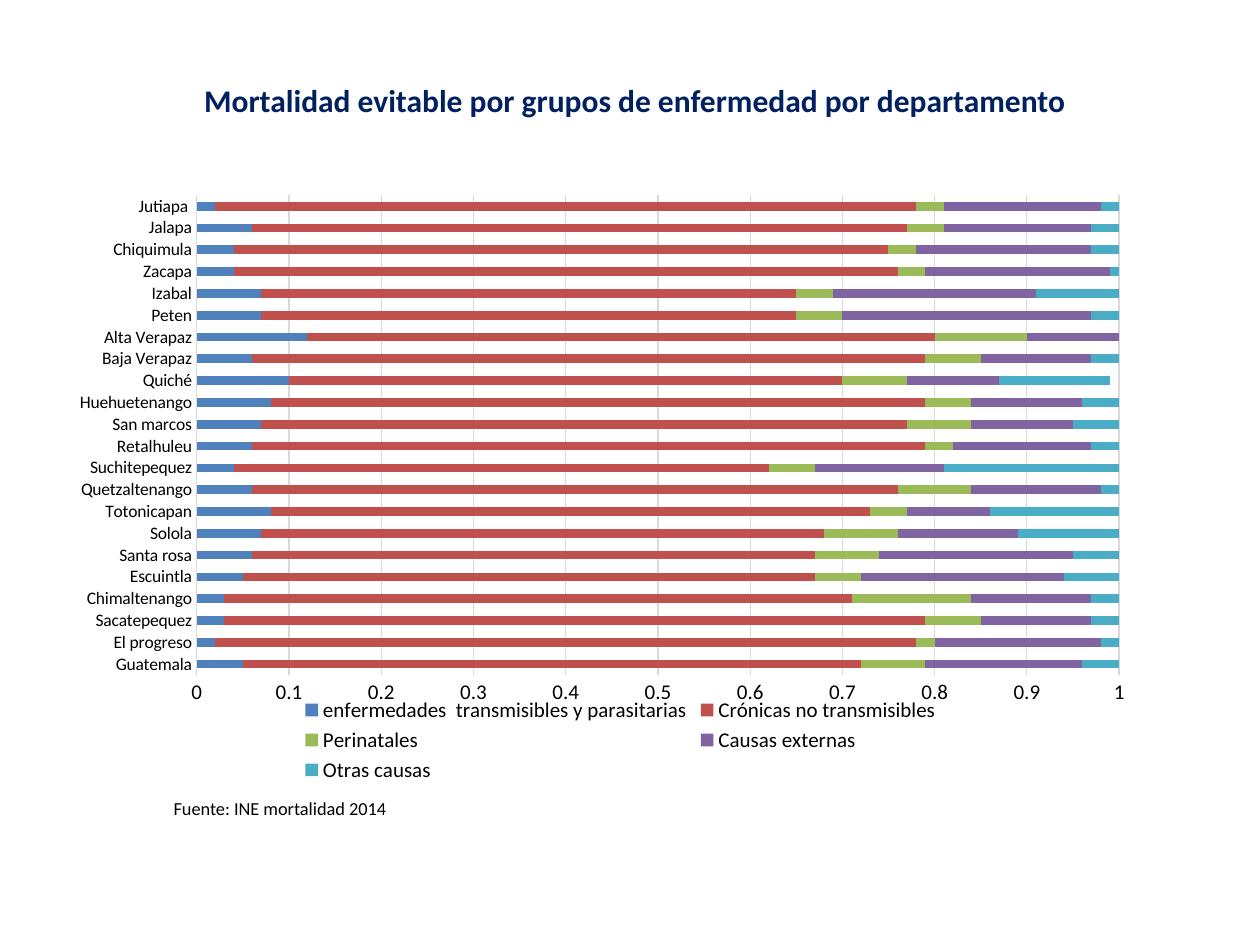
from dataclasses import dataclass

from lxml.etree import SubElement
from pptx import Presentation
from pptx.chart.data import CategoryChartData
from pptx.dml.color import RGBColor
from pptx.enum.chart import XL_CHART_TYPE, XL_LEGEND_POSITION, XL_TICK_MARK
from pptx.enum.text import MSO_ANCHOR, MSO_AUTO_SIZE, PP_ALIGN
from pptx.oxml.ns import qn
from pptx.util import Inches, Pt


@dataclass(frozen=True)
class Theme:
    font: str = "Calibri"
    text: str = "000000"
    title: str = "002060"
    grid: str = "D9D9D9"
    title_size: float = 18
    chart_size: float = 12
    category_size: float = 10
    source_size: float = 10.5


THEME = Theme()

DEPARTMENTS = [
    "Guatemala", "El progreso", "Sacatepequez", "Chimaltenango", "Escuintla", "Santa rosa",
    "Solola", "Totonicapan", "Quetzaltenango", "Suchitepequez", "Retalhuleu", "San marcos",
    "Huehuetenango", "Quiché", "Baja Verapaz", "Alta Verapaz", "Peten", "Izabal",
    "Zacapa", "Chiquimula", "Jalapa", "Jutiapa ",
]

CAUSES = [
    ("enfermedades  transmisibles y parasitarias", "4F81BD",
     [0.05, 0.02, 0.03, 0.03, 0.05, 0.06, 0.07, 0.08, 0.06, 0.04, 0.06,
      0.07, 0.08, 0.1, 0.06, 0.12, 0.07, 0.07, 0.04, 0.04, 0.06, 0.02]),
    ("Crónicas no transmisibles", "C0504D",
     [0.67, 0.76, 0.76, 0.68, 0.62, 0.61, 0.61, 0.65, 0.7, 0.58, 0.73,
      0.7, 0.71, 0.6, 0.73, 0.68, 0.58, 0.58, 0.72, 0.71, 0.71, 0.76]),
    ("Perinatales", "9BBB59",
     [0.07, 0.02, 0.06, 0.13, 0.05, 0.07, 0.08, 0.04, 0.08, 0.05, 0.03,
      0.07, 0.05, 0.07, 0.06, 0.1, 0.05, 0.04, 0.03, 0.03, 0.04, 0.03]),
    ("Causas externas", "8064A2",
     [0.17, 0.18, 0.12, 0.13, 0.22, 0.21, 0.13, 0.09, 0.14, 0.14, 0.15,
      0.11, 0.12, 0.1, 0.12, 0.1, 0.27, 0.22, 0.2, 0.19, 0.16, 0.17]),
    ("Otras causas", "4BACC6",
     [0.04, 0.02, 0.04, 0.03, 0.07, 0.06, 0.11, 0.14, 0.02, 0.19, 0.04,
      0.05, 0.04, 0.12, 0.04, 0, 0.03, 0.1, 0.01, 0.03, 0.03, 0.02]),
]


def format_font(font, size, color=THEME.text, bold=False):
    font.name = THEME.font
    font.size = Pt(size)
    font.bold = bold
    font.color.rgb = RGBColor.from_string(color)


def write_text(frame, text, size, color=THEME.text, bold=False, align=None, spacing=None):
    paragraph = frame.paragraphs[0]
    paragraph.alignment = align
    paragraph.line_spacing = spacing
    run = paragraph.add_run()
    run.text = text
    format_font(run.font, size, color, bold)


def format_line(line, color):
    line.color.rgb = RGBColor.from_string(color)
    line.width = Pt(0.75)


def place_plot(chart, **bounds):
    plot_area = chart.plots[0]._element.getparent()
    for old_layout in plot_area.findall(qn("c:layout")):
        plot_area.remove(old_layout)
    layout = SubElement(plot_area, qn("c:layout"))
    plot_area.insert(0, layout)
    manual = SubElement(layout, qn("c:manualLayout"))
    settings = {"layoutTarget": "inner", "xMode": "edge", "yMode": "edge", **bounds}
    for name, value in settings.items():
        SubElement(manual, qn(f"c:{name}")).set("val", str(value))


class SlideBuilder:
    def __init__(self, slide, theme):
        self.slide = slide
        self.theme = theme

    def title(self, text, left, top, width, height):
        shape = self.slide.shapes.title
        shape.left, shape.top = Inches(left), Inches(top)
        shape.width, shape.height = Inches(width), Inches(height)
        frame = shape.text_frame
        frame.word_wrap = True
        frame.auto_size = MSO_AUTO_SIZE.NONE
        frame.vertical_anchor = MSO_ANCHOR.MIDDLE
        frame.margin_left = frame.margin_right = Inches(0.08)
        frame.margin_top = frame.margin_bottom = Inches(0.04)
        write_text(frame, text, self.theme.title_size, color=self.theme.title,
                   bold=True, align=PP_ALIGN.CENTER, spacing=0.9)

    def source(self, text, left, top, width, height):
        box = self.slide.shapes.add_textbox(Inches(left), Inches(top), Inches(width), Inches(height))
        frame = box.text_frame
        frame.word_wrap = True
        frame.auto_size = MSO_AUTO_SIZE.SHAPE_TO_FIT_TEXT
        write_text(frame, text, self.theme.source_size)

    def stacked_bars(self, categories, series_rows, left, top, width, height):
        data = CategoryChartData()
        data.categories = categories
        for name, _, values in series_rows:
            data.add_series(name, values)
        chart = self.slide.shapes.add_chart(
            XL_CHART_TYPE.BAR_STACKED, Inches(left), Inches(top),
            Inches(width), Inches(height), data).chart
        chart.has_title = False
        format_font(chart.font, self.theme.chart_size)

        plot = chart.plots[0]
        plot.gap_width = 150
        plot.overlap = 100
        plot.vary_by_categories = False
        for series, (_, color, _) in zip(plot.series, series_rows):
            series.format.fill.solid()
            series.format.fill.fore_color.rgb = RGBColor.from_string(color)

        axis_sizes = ((chart.category_axis, self.theme.category_size),
                      (chart.value_axis, self.theme.chart_size))
        for axis, size in axis_sizes:
            axis.major_tick_mark = axis.minor_tick_mark = XL_TICK_MARK.NONE
            format_font(axis.tick_labels.font, size)
        format_line(chart.category_axis.format.line, self.theme.grid)

        value_axis = chart.value_axis
        value_axis.minimum_scale = 0
        value_axis.maximum_scale = 1
        value_axis.major_unit = 0.1
        value_axis.format.line.fill.background()
        value_axis.has_major_gridlines = True
        format_line(value_axis.major_gridlines.format.line, self.theme.grid)

        chart.has_legend = True
        chart.legend.position = XL_LEGEND_POSITION.BOTTOM
        chart.legend.include_in_layout = False
        format_font(chart.legend.font, self.theme.chart_size)
        place_plot(chart, x=0.138, y=0.041, w=0.788, h=0.777)


def main():
    presentation = Presentation()
    presentation.slide_width = Inches(10)
    presentation.slide_height = Inches(7.5)
    slide = presentation.slides.add_slide(presentation.slide_layouts[5])
    builder = SlideBuilder(slide, THEME)
    builder.stacked_bars(DEPARTMENTS, CAUSES, 0.28, 1.35, 9.29, 4.9)
    builder.source("Fuente: INE mortalidad 2014", 1.28, 6.28, 2.54, 0.28)
    builder.title("Mortalidad evitable por grupos de enfermedad por departamento",
                  0.75, 0.27, 8.58, 1.08)
    presentation.save("out.pptx")


if __name__ == "__main__":
    main()
